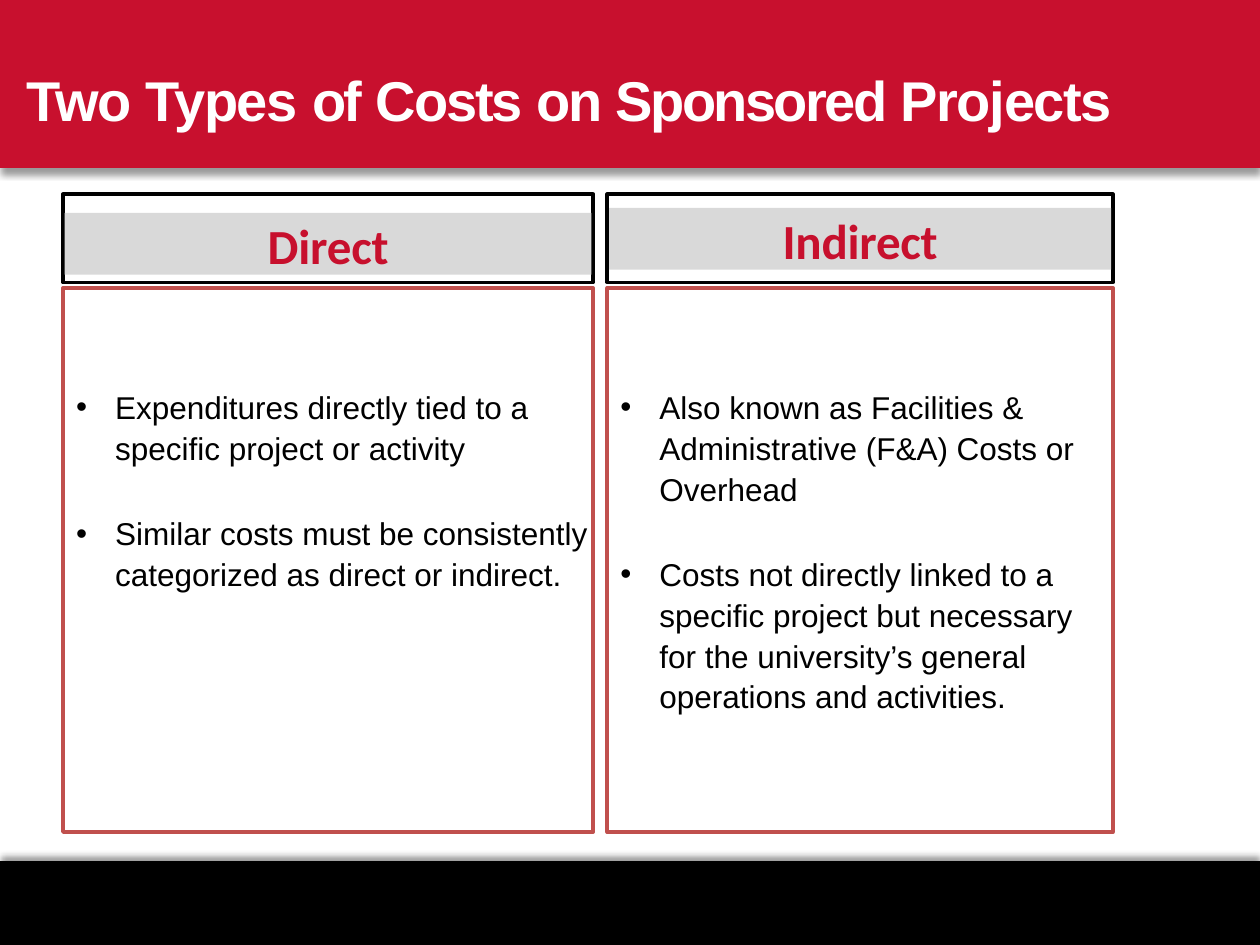
from lxml import etree
from pptx import Presentation
from pptx import util as u
from pptx.dml.color import RGBColor
from pptx.enum import shapes, text
from pptx.oxml import parse_xml
from pptx.oxml.ns import qn

Pt = u.Pt
COLORS = {
    "white": "FFFFFF",
    "black": "000000",
    "banner": "C8102E",
    "heading": "C7102D",
    "heading_fill": "D9D9D9",
    "body_border": "C0504D",
}
NS = "http://schemas.openxmlformats.org/drawingml/2006/main"

# Each word of the title has its own letter spacing, in hundredths of a point.
TITLE_WORDS = [("Two ", -90), ("Types ", -80), ("of ", -140), ("Costs ", -120),
               ("on ", -140), ("Sponsored ", -150), ("Projects", -80)]

# Column: left, width, heading, heading top, body height, points
COLUMNS = [
    (36, 303, "Direct", 121.7, 142.6, [
        "Expenditures directly tied to a specific project or activity",
        "Similar costs must be consistently categorized as direct or indirect.",
    ]),
    (347, 289, "Indirect", 118.8, 190, [
        "Also known as Facilities & Administrative (F&A) Costs or Overhead",
        "Costs not directly linked to a specific project but necessary for the "
        "university’s general operations and activities.",
    ]),
]


def rgb(name):
    return RGBColor.from_string(COLORS[name])


def style_font(font, face, size, color, bold=False):
    font.name, font.size, font.bold = face, Pt(size), bold
    font.color.rgb = rgb(color)


def set_frame(frame, top_inset, anchor=text.MSO_ANCHOR.TOP):
    frame.margin_left = frame.margin_right = frame.margin_bottom = 0
    frame.margin_top = Pt(top_inset)
    frame.vertical_anchor = anchor
    frame.word_wrap = True
    frame.auto_size = text.MSO_AUTO_SIZE.SHAPE_TO_FIT_TEXT


def add_rect(slide, left, top, width, height, fill=None, border=None):
    rect = slide.shapes.add_shape(shapes.MSO_SHAPE.RECTANGLE,
                                  Pt(left), Pt(top), Pt(width), Pt(height))
    rect.shadow.inherit = False
    if fill:
        rect.fill.solid()
        rect.fill.fore_color.rgb = rgb(fill)
    else:
        rect.fill.background()
    if border:
        rect.line.color.rgb = rgb(border)
        rect.line.width = Pt(2)
    else:
        rect.line.fill.background()
    return rect


def add_band(slide, top, height, fill, shadow_angle):
    """Full-width bar with a soft shadow cast towards the slide body."""
    band = add_rect(slide, 0, top, 720, height, fill)
    effects = band.element.spPr.find(qn("a:effectLst"))
    effects.append(parse_xml(
        f'<a:outerShdw xmlns:a="{NS}" blurRad="{Pt(4)}" dist="{Pt(3)}" '
        f'dir="{shadow_angle * 60000}" algn="ctr" rotWithShape="0">'
        f'<a:srgbClr val="{COLORS["black"]}"><a:alpha val="40000"/></a:srgbClr>'
        '</a:outerShdw>'))


def format_title(slide):
    title = slide.shapes.title
    slide.shapes.element.append(title.element)  # in front of the bands
    title.left, title.top = Pt(14.4), Pt(14.4)
    title.width, title.height = Pt(622), Pt(61.2)
    set_frame(title.text_frame, 23.4, text.MSO_ANCHOR.MIDDLE)
    paragraph = title.text_frame.paragraphs[0]
    paragraph.alignment = text.PP_ALIGN.LEFT
    paragraph._p.get_or_add_pPr().set("marL", str(Pt(0.9)))
    for word, spacing in TITLE_WORDS:
        run = paragraph.add_run()
        run.text = word
        style_font(run.font, "Arial", 32, "white", bold=True)
        run.font._element.set("spc", str(spacing))


def add_heading(slide, left, top, width, label):
    heading = add_rect(slide, left, top, width, 35.3, "heading_fill")
    set_frame(heading.text_frame, 1.6)
    heading.text_frame.text = label
    paragraph = heading.text_frame.paragraphs[0]
    paragraph.alignment = text.PP_ALIGN.CENTER
    style_font(paragraph.runs[0].font, "Calibri", 28, "heading", bold=True)
    paragraph.runs[0].font._element.set("spc", "-10")


def add_bullet(paragraph):
    props = paragraph._p.get_or_add_pPr()
    props.set("marL", str(Pt(28.8)))
    props.set("indent", str(Pt(-22.3)))
    etree.SubElement(props, qn("a:buFont")).set("typeface", "Arial")
    etree.SubElement(props, qn("a:buChar")).set("char", "•")


def add_points(slide, left, width, height, points):
    box = slide.shapes.add_textbox(Pt(left), Pt(218.2), Pt(width), Pt(height))
    set_frame(box.text_frame, 1.8)
    box.text_frame.text = "\n".join(points)
    for index, paragraph in enumerate(box.text_frame.paragraphs):
        add_bullet(paragraph)
        paragraph.line_spacing = 1.08
        paragraph.space_before = Pt(25.5 if index else 0)
        style_font(paragraph.runs[0].font, "Arial", 18, "black")


def add_column(slide, left, width, label, heading_top, body_height, points):
    inner_left, inner_width = left + 1, width - 2
    add_rect(slide, left, 111, width, 50.4, border="black")
    add_heading(slide, inner_left, heading_top, inner_width, label)
    add_rect(slide, left, 164.5, width, 311, border="body_border")
    add_points(slide, inner_left, inner_width, body_height, points)


def main():
    deck = Presentation()
    deck.slide_width, deck.slide_height = Pt(720), Pt(540)
    slide = deck.slides.add_slide(deck.slide_layouts[5])
    add_band(slide, 492, 48, "black", 270)
    add_band(slide, 0, 96, "banner", 90)
    format_title(slide)
    for column in COLUMNS:
        add_column(slide, *column)
    deck.save("out.pptx")


if __name__ == "__main__":
    main()
